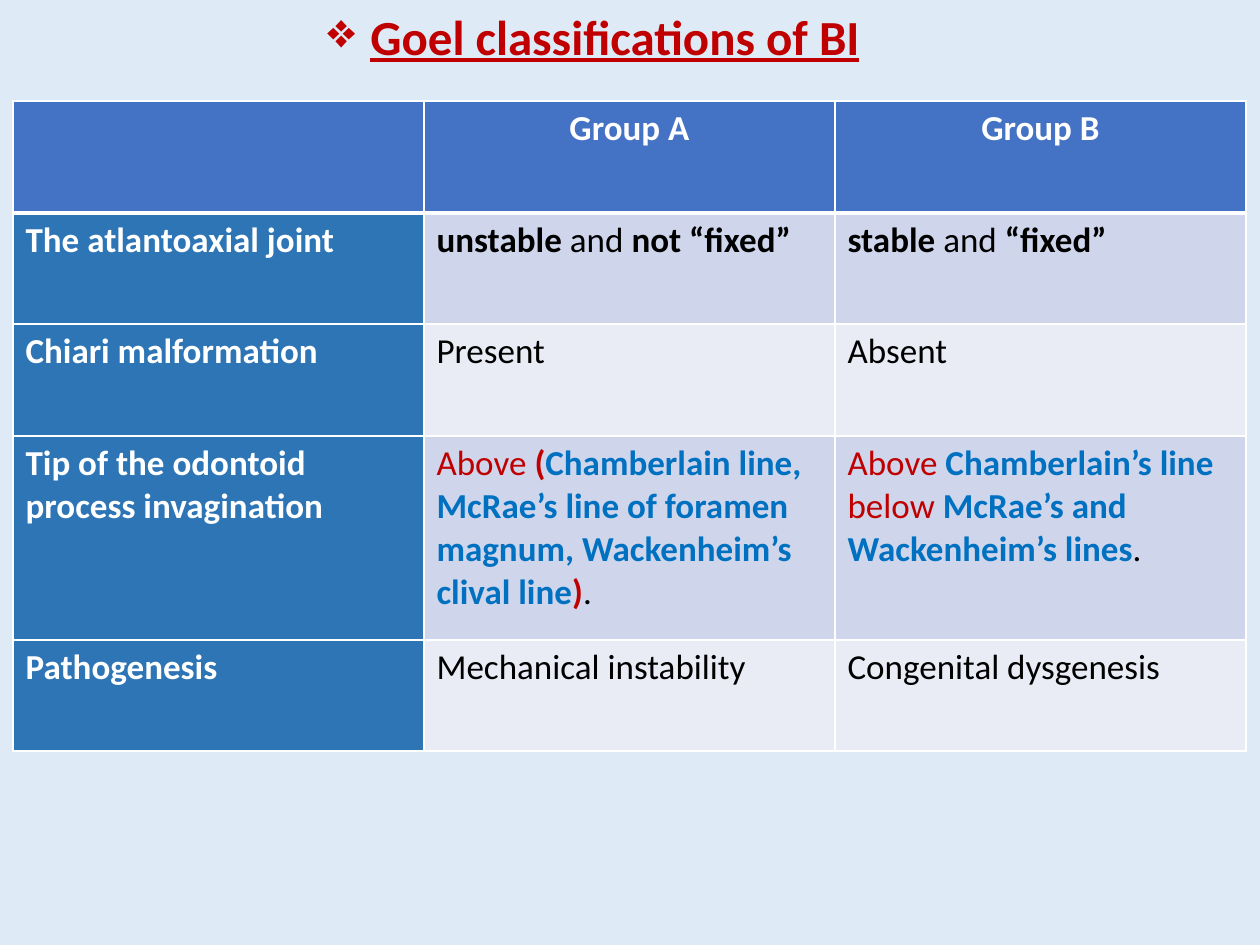
from lxml import etree
from pptx import Presentation
from pptx.dml.color import RGBColor
from pptx.enum.text import MSO_AUTO_SIZE, PP_ALIGN
from pptx.oxml.ns import qn
from pptx.util import Pt

LEFT, CENTER = PP_ALIGN.LEFT, PP_ALIGN.CENTER
GROW = MSO_AUTO_SIZE.SHAPE_TO_FIT_TEXT
PX_PER_INCH = 126
COLORS = {
    "background": "DEEBF7",
    "header": "4472C4",
    "label": "2E75B6",
    "band_dark": "CFD5EA",
    "band_light": "E9EBF5",
    "white": "FFFFFF",
    "black": "000000",
    "red": "C00000",
    "blue": "0070C0",
}
COL_WIDTH = 411
ROW_HEIGHTS = [112, 111, 112, 204, 111]


def px(n):
    return round(n * 914400 / PX_PER_INCH)


def rgb(name):
    return RGBColor.from_string(COLORS[name])


def plain(text):
    """One paragraph in regular black."""
    return [[(text, "black", False)]]


# Each cell is a list of paragraphs, each a list of (text, colour, bold) runs.
ROWS = [
    ("The atlantoaxial joint",
     [[("unstable", "black", True), (" and ", "black", False), ("not “fixed”", "black", True)]],
     [[("stable", "black", True), (" and ", "black", False), ("“fixed”", "black", True)]]),
    ("Chiari malformation", plain("Present"), plain("Absent")),
    ("Tip of the odontoid process invagination",
     [[("Above ", "red", False), ("(", "red", True),
       ("Chamberlain line, McRae’s line of foramen magnum, Wackenheim’s clival line",
        "blue", True),
       (")", "red", True), (".", "black", False)]],
     [[("Above ", "red", False), ("Chamberlain’s line", "blue", True)],
      [("below ", "red", False), ("McRae’s and Wackenheim’s lines", "blue", True),
       (".", "black", False)]]),
    ("Pathogenesis", plain("Mechanical instability"), plain("Congenital dysgenesis")),
]


class SlideBuilder:
    font = "Calibri"
    title_size = 28
    cell_size = 20

    def __init__(self, slide):
        self.s = slide
        fill = slide.background.fill
        fill.solid()
        fill.fore_color.rgb = rgb("background")

    def title(self, text, x, y, w, h, bullet, indent):
        tf = self.s.shapes.add_textbox(px(x), px(y), px(w), px(h)).text_frame
        tf.word_wrap = True
        tf.auto_size = GROW
        p = tf.paragraphs[0]
        p.text = text
        self.style(p.font, self.title_size, "red", True)
        p.font.underline = True
        pPr = p._p.get_or_add_pPr()
        pPr.set("marL", str(px(indent)))
        pPr.set("indent", str(-px(indent)))
        bu = etree.Element(qn("a:buChar"), char=bullet)
        pPr.insert(0, bu)

    def table(self, x, y, col_widths, row_heights):
        frame = self.s.shapes.add_table(
            len(row_heights), len(col_widths), px(x), px(y),
            px(sum(col_widths)), px(sum(row_heights)))
        table = frame.table
        for col, width in zip(table.columns, col_widths):
            col.width = px(width)
        for row, height in zip(table.rows, row_heights):
            row.height = px(height)
        return table

    def cell(self, cell, paragraphs, fill, align=LEFT, top=1, bottom=1):
        tf = cell.text_frame
        for i, runs in enumerate(paragraphs):
            p = tf.add_paragraph() if i else tf.paragraphs[0]
            p.alignment = align
            for text, color, bold in runs:
                r = p.add_run()
                r.text = text
                self.style(r.font, self.cell_size, color, bold)
        self.borders(cell, {"L": 1, "R": 1, "T": top, "B": bottom})
        cell.fill.solid()
        cell.fill.fore_color.rgb = rgb(fill)

    def borders(self, cell, widths):
        tcPr = cell._tc.get_or_add_tcPr()
        for side, width in widths.items():
            ln = etree.SubElement(tcPr, qn(f"a:ln{side}"), w=str(Pt(width)))
            fill = etree.SubElement(ln, qn("a:solidFill"))
            etree.SubElement(fill, qn("a:srgbClr"), val=COLORS["white"])

    def style(self, font, size, color, bold):
        font.name = self.font
        font.size = Pt(size)
        font.bold = bold
        font.color.rgb = rgb(color)


def main():
    prs = Presentation()
    prs.slide_width, prs.slide_height = px(1260), px(945)
    b = SlideBuilder(prs.slides.add_slide(prs.slide_layouts[6]))

    table = b.table(13, 101, [COL_WIDTH] * 3, ROW_HEIGHTS)
    for col, heading in enumerate(("", "Group A", "Group B")):
        paragraphs = [[(heading, "white", True)]] if heading else []
        b.cell(table.cell(0, col), paragraphs, "header", CENTER, bottom=3)
    for row, (label, *groups) in enumerate(ROWS, start=1):
        top = 3 if row == 1 else 1
        b.cell(table.cell(row, 0), [[(label, "white", True)]], "label", top=top)
        band = "band_dark" if row % 2 else "band_light"
        for col, paragraphs in enumerate(groups, start=1):
            b.cell(table.cell(row, col), paragraphs, band, top=top)

    b.title("Goel classifications of BI", 315, 0, 630, 72, bullet="❖", indent=43)
    prs.save("out.pptx")


if __name__ == "__main__":
    main()
